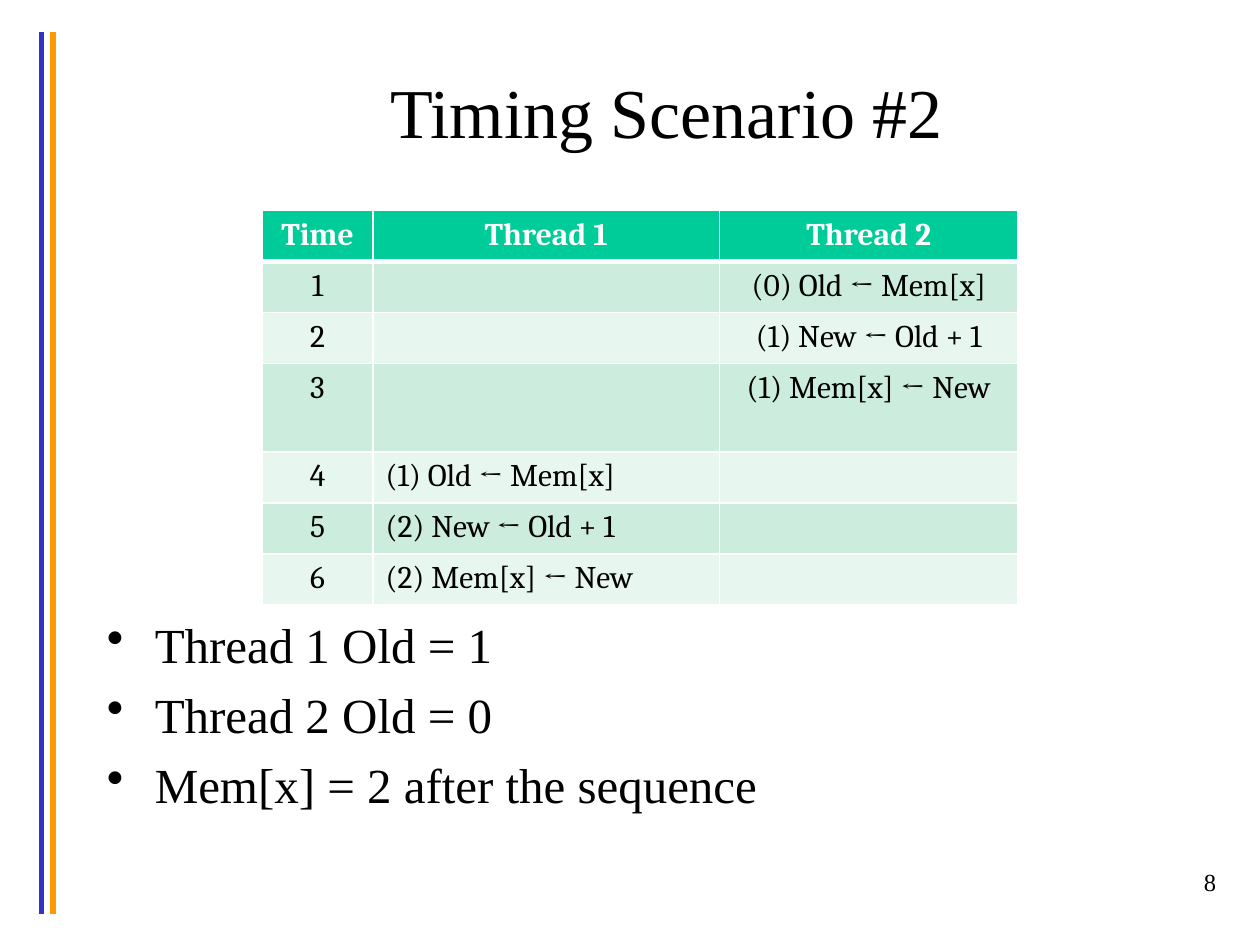
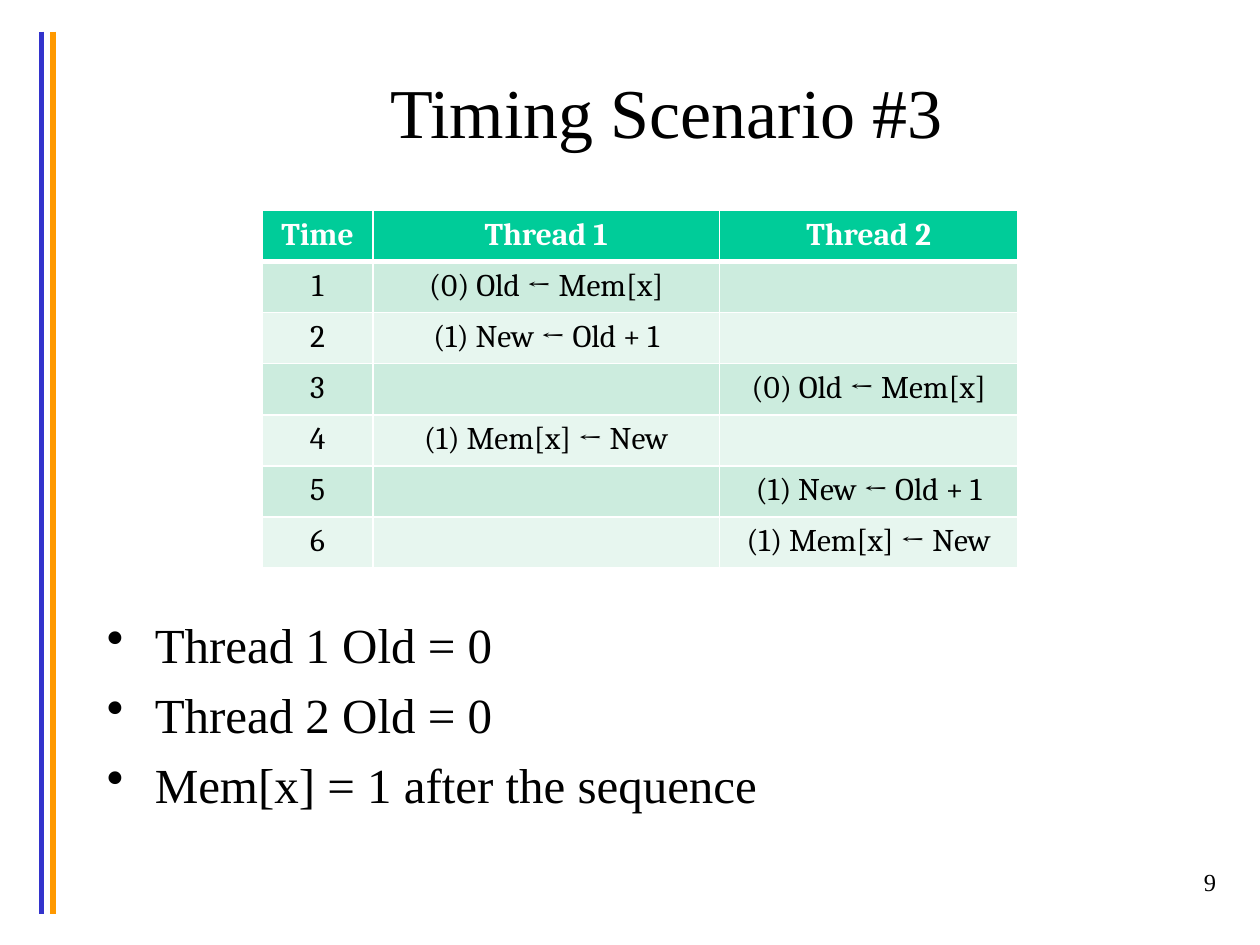
from lxml import etree
from pptx import Presentation
from pptx.dml.color import RGBColor
from pptx.enum.shapes import MSO_CONNECTOR
from pptx.enum.text import MSO_ANCHOR, PP_ALIGN
from pptx.oxml.ns import qn
from pptx.util import Inches, Pt

STRAIGHT = MSO_CONNECTOR.STRAIGHT
LEFT, CENTER, RIGHT = PP_ALIGN.LEFT, PP_ALIGN.CENTER, PP_ALIGN.RIGHT
TOP, MIDDLE = MSO_ANCHOR.TOP, MSO_ANCHOR.MIDDLE

COLORS = {
    "text": "000000",
    "white": "FFFFFF",
    "blue rule": "3333CC",
    "orange rule": "FF9900",
    "header": "00CC99",
    "odd row": "CCECDE",
    "even row": "E7F6EF",
}
BODY_FONT = "Times New Roman"
TABLE_FONT = "Cambria"

HEADINGS = ["Time", "Thread 1", "Thread 2"]
COLUMN_WIDTHS = [0.88, 2.75, 2.37]
ROW_HEIGHT = 2.84 / 7
TALL_ROW_HEIGHT = 0.7
THIN, THICK = 1, 3

# Each step is (thread, operation); its position gives the time.
SCENARIOS = [
    {
        "number": 2,
        "page": 8,
        "steps": [
            (2, "(0) Old ← Mem[x]"),
            (2, "(1) New ← Old + 1"),
            (2, "(1) Mem[x] ← New"),
            (1, "(1) Old ← Mem[x]"),
            (1, "(2) New ← Old + 1"),
            (1, "(2) Mem[x] ← New"),
        ],
        "thread 1 align": LEFT,
        "tall times": [3],
        "results": ["Thread 1 Old = 1", "Thread 2 Old = 0",
                    "Mem[x] = 2 after the sequence"],
    },
    {
        "number": 3,
        "page": 9,
        "steps": [
            (1, "(0) Old ← Mem[x]"),
            (1, "(1) New ← Old + 1"),
            (2, "(0) Old ← Mem[x]"),
            (1, "(1) Mem[x] ← New"),
            (2, "(1) New ← Old + 1"),
            (2, "(1) Mem[x] ← New"),
        ],
        "thread 1 align": CENTER,
        "tall times": [],
        "results": ["Thread 1 Old = 0", "Thread 2 Old = 0",
                    "Mem[x] = 1 after the sequence"],
    },
]


def color(name):
    return RGBColor.from_string(COLORS[name])


def add_span(para, text, size, font=BODY_FONT, color_name="text", bold=False):
    span = para.add_run()
    span.text = text
    span.font.size = Pt(size)
    span.font.name = font
    span.font.bold = bold
    span.font.color.rgb = color(color_name)


def add_text(page, left, top, width, height, lines, size, align=LEFT, anchor=TOP):
    """Add a text box with one paragraph per line and return its paragraphs."""
    box = page.shapes.add_textbox(Inches(left), Inches(top),
                                  Inches(width), Inches(height))
    frame = box.text_frame
    frame.word_wrap = True
    frame.vertical_anchor = anchor
    for index, line in enumerate(lines):
        para = frame.add_paragraph() if index else frame.paragraphs[0]
        para.alignment = align
        add_span(para, line, size)
    return frame.paragraphs


def add_rule(page, x, color_name):
    rule = page.shapes.add_connector(STRAIGHT, Inches(x), Inches(0.25),
                                     Inches(x), Inches(7.25))
    rule.line.color.rgb = color(color_name)
    rule.line.width = Pt(3)
    etree.SubElement(rule._element.spPr, qn("a:effectLst"))


def add_frame(page, title, number):
    """Add what every slide shares: side rules, title and slide number."""
    add_rule(page, 0.33, "blue rule")
    add_rule(page, 0.42, "orange rule")
    add_text(page, 0.75, 0.25, 9.08, 1.25, [title], 40, CENTER, MIDDLE)
    add_text(page, 7.67, 6.83, 2.08, 0.5, [str(number)], 14, RIGHT)


def add_bullets(page, lines):
    for para in add_text(page, 0.75, 4.83, 9.08, 1.83, lines, 28):
        para.space_before = Pt(6.4)
        properties = para._p.get_or_add_pPr()
        properties.set("marL", str(Inches(0.38)))
        properties.set("indent", str(Inches(-0.38)))
        etree.SubElement(properties, qn("a:buChar"), char="•")


def set_borders(cell, top, bottom):
    """Draw white borders; must run before the cell gets its fill."""
    properties = cell._tc.get_or_add_tcPr()
    widths = {"a:lnL": THIN, "a:lnR": THIN, "a:lnT": top, "a:lnB": bottom}
    for tag, width in widths.items():
        line = etree.SubElement(properties, qn(tag), w=str(Pt(width)))
        fill = etree.SubElement(line, qn("a:solidFill"))
        etree.SubElement(fill, qn("a:srgbClr"), val=COLORS["white"])


def fill_cell(cell, row, text, align):
    set_borders(cell, THICK if row == 1 else THIN, THICK if row == 0 else THIN)
    is_header = row == 0
    band = "header" if is_header else "odd row" if row % 2 else "even row"
    cell.fill.solid()
    cell.fill.fore_color.rgb = color(band)
    if text:
        para = cell.text_frame.paragraphs[0]
        para.alignment = align
        add_span(para, text, 18, TABLE_FONT,
                 "white" if is_header else "text", is_header)


def add_timeline(page, scenario):
    """Add the table that shows which thread acts at each time."""
    rows = [HEADINGS]
    for time, (thread, operation) in enumerate(scenario["steps"], 1):
        rows.append([str(time)] + [operation if thread == column else ""
                                   for column in (1, 2)])
    heights = [TALL_ROW_HEIGHT if row in scenario["tall times"] else ROW_HEIGHT
               for row in range(len(rows))]
    table = page.shapes.add_table(
        len(rows), len(HEADINGS), Inches(2.08), Inches(1.67),
        Inches(sum(COLUMN_WIDTHS)), Inches(sum(heights))).table
    for column, width in zip(table.columns, COLUMN_WIDTHS):
        column.width = Inches(width)
    for row, texts in enumerate(rows):
        table.rows[row].height = Inches(heights[row])
        for column, text in enumerate(texts):
            in_thread_1 = row > 0 and column == 1
            align = scenario["thread 1 align"] if in_thread_1 else CENTER
            fill_cell(table.cell(row, column), row, text, align)


def main():
    deck = Presentation()
    deck.slide_width, deck.slide_height = Inches(10), Inches(7.5)
    blank = deck.slide_layouts[6]
    for scenario in SCENARIOS:
        page = deck.slides.add_slide(blank)
        add_frame(page, f"Timing Scenario #{scenario['number']}", scenario["page"])
        add_timeline(page, scenario)
        add_bullets(page, scenario["results"])
    deck.save("out.pptx")


if __name__ == "__main__":
    main()
